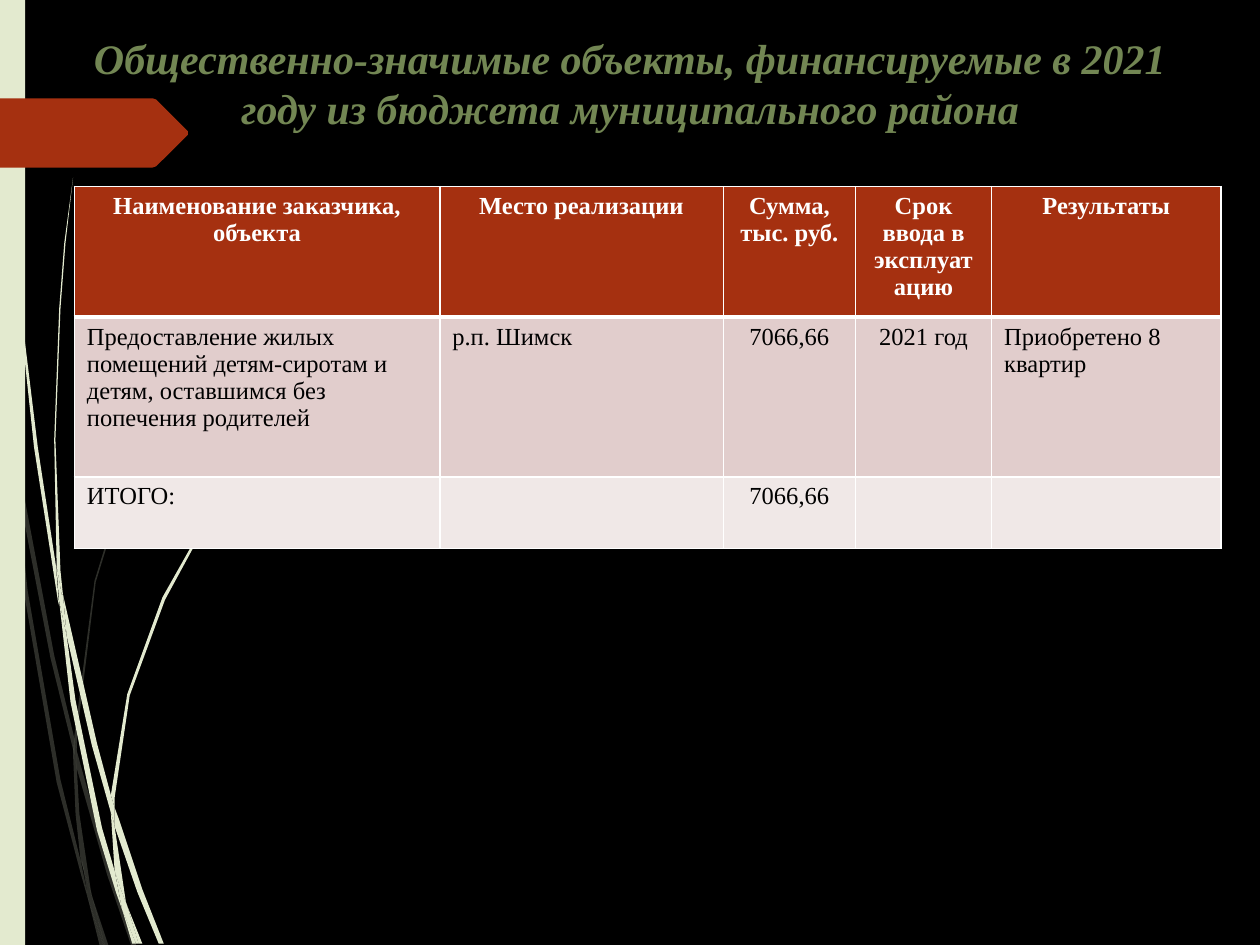
"""Build the slide on socially significant projects financed in 2021."""
from dataclasses import dataclass

from lxml import etree
from pptx import Presentation, util as u
from pptx.dml.color import RGBColor
from pptx.enum import shapes, text
from pptx.oxml import ns


@dataclass(frozen=True)
class Theme:
    """Colours and type sizes of the slide."""
    font: str = "Times New Roman"
    title_size: int = 24
    table_size: int = 14
    background: str = "000000"
    strand: str = "E3EACF"
    accent: str = "A53010"
    title: str = "728653"
    light: str = "FFFFFF"
    dark: str = "000000"
    bands: tuple = ("E1CDCC", "F0E8E7")


GRID = 0.72
FAINT_STRANDS = [
    [(8, 350), (6, 322), (0, 282), (0, 299), (7, 344)],
    [(40, 522), (59, 599), (59, 586), (43, 520), (10, 345), (12, 376)],
    [(64, 607), (61, 596), (61, 610), (85, 694), (104, 750), (108, 750), (88, 692)],
    [(83, 750), (86, 750), (73, 711)],
    [(64, 683), (48, 619), (22, 469), (12, 376), (8, 350), (19, 470), (45, 621),
     (64, 693), (70, 714), (69, 707)],
    [(58, 599), (60, 646), (64, 683), (67, 692), (73, 711), (72, 706), (63, 646),
     (61, 610), (61, 608)],
    [(61, 584), (76, 462), (111, 349), (159, 245), (187, 198), (201, 175), (217, 154),
     (217, 153), (201, 175), (186, 197), (158, 244), (110, 348), (75, 461), (59, 584),
     (59, 586), (61, 596)],
    [(70, 714), (79, 750), (82, 750)],
    [(61, 608), (61, 610), (61, 596), (59, 586), (58, 599)],
    [(67, 692), (65, 683), (69, 707), (70, 714), (82, 750), (83, 750), (73, 711)],
]
BRIGHT_STRANDS = [
    [(5, 110), (14, 233), (27, 355), (46, 477), (47, 481), (45, 457), (45, 453),
     (30, 355), (15, 232), (6, 109), (4, 48), (3, 0), (2, 0), (3, 48)],
    [(73, 592), (88, 645), (88, 633), (88, 631), (77, 590), (50, 472), (53, 505)],
    [(94, 649), (91, 641), (91, 656), (109, 708), (126, 749), (130, 749), (113, 706)],
    [(91, 691), (81, 657), (60, 556), (53, 505), (47, 477), (56, 557), (77, 659),
     (92, 708), (97, 722), (96, 717)],
    [(50, 472), (48, 453), (44, 349), (48, 245), (52, 193), (58, 141), (51, 193),
     (47, 245), (43, 349), (45, 449), (49, 472)],
    [(110, 749), (113, 749), (101, 719)],
    [(47, 477), (53, 505), (50, 472), (49, 472), (45, 449), (45, 453)],
    [(91, 633), (103, 552), (131, 476), (169, 406), (191, 374), (203, 359), (216, 344),
     (215, 344), (203, 358), (191, 373), (168, 405), (129, 474), (101, 551), (88, 631),
     (91, 641)],
    [(97, 722), (105, 749), (108, 749)],
    [(88, 645), (91, 691), (96, 706), (101, 719), (100, 716), (91, 656), (90, 651)],
    [(88, 645), (90, 651), (91, 656), (91, 641), (88, 631), (88, 633)],
    [(96, 706), (91, 691), (96, 717), (97, 722), (108, 749), (110, 749), (101, 719)],
]
ARROW = [(0, 78), (121, 78), (124, 79), (149, 104), (149, 107), (124, 132), (121, 133), (0, 133)]
COLUMNS = [208.8, 162, 75.6, 77.8, 131]
ROWS = [74.2, 91.4, 41]
CENTRED_COLUMNS = (2, 3)
CELLS = [
    ["Наименование заказчика, объекта", "Место реализации", "Сумма, тыс. руб.",
     "Срок ввода в эксплуатацию", "Результаты"],
    ["Предоставление жилых помещений детям-сиротам и детям, оставшимся без попечения родителей",
     "р.п. Шимск", "7066,66", "2021 год", "Приобретено 8 квартир"],
    ["ИТОГО:", "", "7066,66", "", ""],
]


class SlideBuilder:
    """Draw themed elements on one slide."""

    def __init__(self, slide, theme):
        self.slide = slide
        self.theme = theme
        self.fill(slide.background, theme.background)

    def fill(self, target, color):
        target.fill.solid()
        target.fill.fore_color.rgb = RGBColor.from_string(color)

    def paint(self, shape, color, opacity=100):
        shape.shadow.inherit = False
        self.fill(shape, color)
        shape.line.fill.background()
        if opacity < 100:
            value = shape.element.spPr.find(".//" + ns.qn("a:srgbClr"))
            etree.SubElement(value, ns.qn("a:alpha"), val=str(opacity * 1000))

    def set_text(self, text_frame, words, size, color, centred, bold=False, italic=False):
        text_frame.text = words
        paragraph = text_frame.paragraphs[0]
        paragraph.alignment = text.PP_ALIGN.CENTER if centred else text.PP_ALIGN.LEFT
        for run in paragraph.runs:
            run.font.name = self.theme.font
            run.font.size = u.Pt(size)
            run.font.bold = bold
            run.font.italic = italic
            run.font.color.rgb = RGBColor.from_string(color)

    def outline(self, container, points, color, opacity=100):
        builder = container.build_freeform(*points[0], scale=u.Pt(GRID))
        builder.add_line_segments(points[1:], close=True)
        self.paint(builder.convert_to_shape(), color, opacity)

    def strands(self, outlines, opacity=100):
        group = self.slide.shapes.add_group_shape()
        for points in outlines:
            self.outline(group.shapes, points, self.theme.strand, opacity)

    def bar(self, left, top, width, height):
        shape = self.slide.shapes.add_shape(
            shapes.MSO_SHAPE.RECTANGLE, u.Pt(left), u.Pt(top), u.Pt(width), u.Pt(height))
        self.paint(shape, self.theme.strand)

    def title(self, words, left, top, width, height):
        box = self.slide.shapes.add_textbox(u.Pt(left), u.Pt(top), u.Pt(width), u.Pt(height))
        box.text_frame.word_wrap = True
        self.set_text(box.text_frame, words, self.theme.title_size, self.theme.title,
                      centred=True, bold=True, italic=True)

    def border(self, cell, side, width):
        line = etree.SubElement(cell._tc.get_or_add_tcPr(), ns.qn("a:ln" + side),
                                w=str(u.Pt(width)))
        solid = etree.SubElement(line, ns.qn("a:solidFill"))
        etree.SubElement(solid, ns.qn("a:srgbClr"), val=self.theme.light)

    def table(self, rows, left, top):
        table = self.slide.shapes.add_table(
            len(ROWS), len(COLUMNS), u.Pt(left), u.Pt(top),
            u.Pt(sum(COLUMNS)), u.Pt(sum(ROWS))).table
        for column, width in zip(table.columns, COLUMNS):
            column.width = u.Pt(width)
        for row, height in zip(table.rows, ROWS):
            row.height = u.Pt(height)
        fills = (self.theme.accent, *self.theme.bands)
        for r, row in enumerate(rows):
            header = r == 0
            for c, words in enumerate(row):
                cell = table.cell(r, c)
                for side in "LRTB":
                    heavy = (r, side) in ((0, "B"), (1, "T"))
                    self.border(cell, side, 3 if heavy else 1)
                self.fill(cell, fills[r])
                self.set_text(cell.text_frame, words, self.theme.table_size,
                              self.theme.light if header else self.theme.dark,
                              centred=header or c in CENTRED_COLUMNS, bold=header)


def main():
    presentation = Presentation()
    presentation.slide_width, presentation.slide_height = u.Pt(720), u.Pt(540)
    slide = presentation.slides.add_slide(presentation.slide_layouts[6])
    builder = SlideBuilder(slide, Theme())
    builder.strands(FAINT_STRANDS, opacity=20)
    builder.strands(BRIGHT_STRANDS)
    builder.bar(0, 0, 14.4, 540)
    builder.outline(slide.shapes, ARROW, builder.theme.accent)
    builder.title("Общественно-значимые объекты, финансируемые в 2021 году "
                  "из бюджета муниципального района", 42.5, 15, 635, 100.8)
    builder.table(CELLS, 42.5, 106.6)
    presentation.save("out.pptx")


if __name__ == "__main__":
    main()
